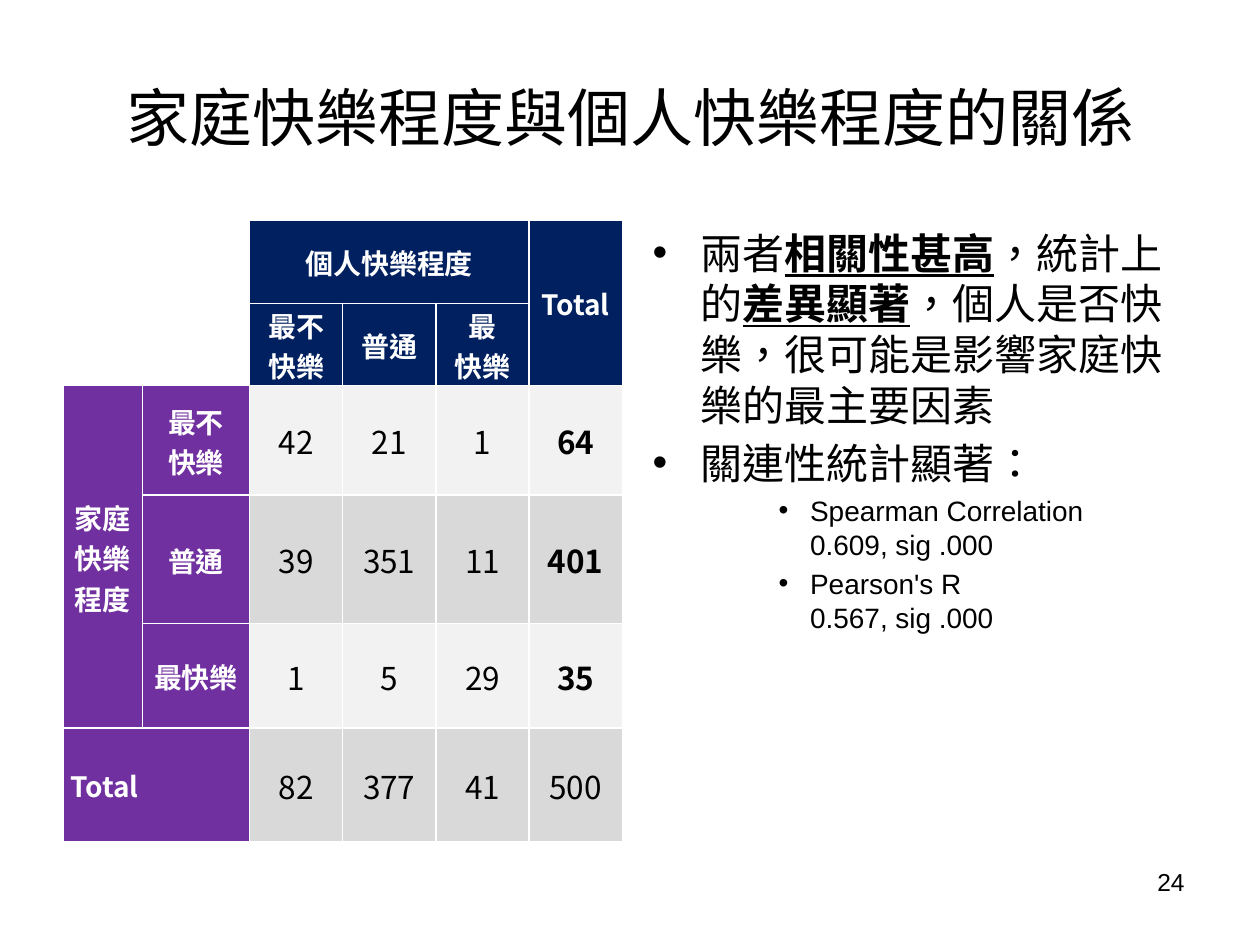
from dataclasses import dataclass
from typing import Any

from lxml import etree
from pptx import Presentation
from pptx.dml.color import RGBColor
from pptx.enum.lang import MSO_LANGUAGE_ID as Language
from pptx.enum.text import MSO_ANCHOR, MSO_AUTO_SIZE, PP_ALIGN
from pptx.oxml import parse_xml
from pptx.oxml.ns import nsdecls, qn
from pptx.util import Inches, Pt

BLACK = RGBColor(0x00, 0x00, 0x00)
WHITE = RGBColor(0xFF, 0xFF, 0xFF)
NAVY = RGBColor(0x00, 0x20, 0x60)
PURPLE = RGBColor(0x70, 0x30, 0xA0)
LIGHT_GRAY = RGBColor(0xF2, 0xF2, 0xF2)
MID_GRAY = RGBColor(0xD9, 0xD9, 0xD9)

COLUMNS = [0.63, 0.85, 0.74, 0.74, 0.74, 0.74]
ROWS = [0.66, 0.63, 0.87, 1.02, 0.83, 0.9]
MERGES = [(0, 0, 1, 1), (0, 2, 0, 4), (0, 5, 1, 5), (2, 0, 4, 0), (5, 0, 5, 1)]
CELLS = [
    ["", "", "個人快樂程度", "", "", "Total"],
    ["", "", "最不\n快樂", "普通", "最\n快樂", ""],
    ["家庭\n快樂\n程度", "最不\n快樂", "42", "21", "1", "64"],
    ["", "普通", "39", "351", "11", "401"],
    ["", "最快樂", "1", "5", "29", "35"],
    ["Total", "", "82", "377", "41", "500"],
]
FINDINGS = [
    [("兩者", False), ("相關性甚高", True), ("，統計上的", False), ("差異顯著", True),
     ("，個人是否快樂，很可能是影響家庭快樂的最主要因素", False)],
    [("關連性統計顯著：", False)],
]
STATISTICS = [
    ("Spearman Correlation", "0.609, sig .000"),
    ("Pearson's R", "0.567, sig .000"),
]


@dataclass
class SlideBuilder:
    slide: Any
    chinese_font: str = "Noto Sans CJK SC"
    latin_font: str = "Arial"

    def format(self, paragraph, size, font_name, color=BLACK, bold=False):
        font = paragraph.font
        font.size = Pt(size)
        font.bold = bold
        font.color.rgb = color
        font.name = font_name
        font.language_id = Language.TRADITIONAL_CHINESE
        defaults = paragraph._p.pPr.find(qn("a:defRPr"))
        etree.SubElement(defaults, qn("a:ea")).set("typeface", font_name)

    def place(self, shape, left, top, width, height):
        shape.left, shape.top = Inches(left), Inches(top)
        shape.width, shape.height = Inches(width), Inches(height)

    def title(self, text):
        shape = self.slide.shapes.title
        self.place(shape, 0.5, 0.3, 9, 1.25)
        frame = shape.text_frame
        frame.text = text
        frame.vertical_anchor = MSO_ANCHOR.MIDDLE
        paragraph = frame.paragraphs[0]
        paragraph.alignment = PP_ALIGN.CENTER
        self.format(paragraph, 36, self.chinese_font)

    def bullet(self, paragraph, margin, hanging, before, spacing):
        paragraph.space_before = Pt(before)
        paragraph.line_spacing = Pt(spacing)
        properties = paragraph._p.get_or_add_pPr()
        properties.set("marL", str(Inches(margin)))
        properties.set("indent", str(-Inches(hanging)))
        etree.SubElement(properties, qn("a:buFont")).set("typeface", self.latin_font)
        etree.SubElement(properties, qn("a:buChar")).set("char", "•")

    def body(self, findings, statistics):
        shape = self.slide.placeholders[1]
        self.place(shape, 5.08, 1.75, 4.42, 4.95)
        frame = shape.text_frame
        frame.auto_size = MSO_AUTO_SIZE.NONE
        for index, pieces in enumerate(findings):
            paragraph = frame.add_paragraph() if index else frame.paragraphs[0]
            self.bullet(paragraph, 0.38, 0.38, 4 if index else 0, 29)
            self.format(paragraph, 24, self.chinese_font)
            for text, emphasized in pieces:
                run = paragraph.add_run()
                run.text = text
                if emphasized:
                    run.font.bold = run.font.underline = True
        for name, value in statistics:
            paragraph = frame.add_paragraph()
            paragraph.level = 2
            self.bullet(paragraph, 1.25, 0.25, 3, 19.4)
            self.format(paragraph, 16, self.latin_font)
            paragraph.add_run().text = name
            paragraph.add_line_break()
            paragraph.add_run().text = value

    def cell(self, cell, text, fill, size, color, bold):
        properties = cell._tc.get_or_add_tcPr()
        for side in ("lnL", "lnR", "lnT", "lnB"):
            properties.append(parse_xml(
                f'<a:{side} {nsdecls("a")} w="{Pt(1)}"><a:solidFill>'
                f'<a:srgbClr val="{WHITE}"/></a:solidFill></a:{side}>'))
        if fill is None:
            cell.fill.background()
        else:
            cell.fill.solid()
            cell.fill.fore_color.rgb = fill
        cell.vertical_anchor = MSO_ANCHOR.MIDDLE
        cell.margin_left = cell.margin_right = cell.margin_top = Inches(0.01)
        cell.margin_bottom = 0
        cell.text = text
        for paragraph in cell.text_frame.paragraphs:
            paragraph.alignment = PP_ALIGN.CENTER
            self.format(paragraph, size, self.chinese_font, color, bold)

    def table(self, rows):
        table = self.slide.shapes.add_table(
            len(ROWS), len(COLUMNS), Inches(0.5), Inches(1.75),
            Inches(sum(COLUMNS)), Inches(sum(ROWS))).table
        table.first_row = table.horz_banding = False
        for column, width in zip(table.columns, COLUMNS):
            column.width = Inches(width)
        for row, height in zip(table.rows, ROWS):
            row.height = Inches(height)
        for top, left, bottom, right in MERGES:
            table.cell(top, left).merge(table.cell(bottom, right))
        last_row, last_column = len(ROWS) - 1, len(COLUMNS) - 1
        for row, texts in enumerate(rows):
            for column, text in enumerate(texts):
                cell = table.cell(row, column)
                if row < 2:
                    fill = NAVY if column > 1 else None
                    self.cell(cell, text, fill, 16, WHITE, True)
                elif column < 2:
                    self.cell(cell, text, PURPLE, 16, WHITE, True)
                else:
                    fill = MID_GRAY if row % 2 else LIGHT_GRAY
                    if row == last_row:
                        fill = MID_GRAY
                    bold = column == last_column and row < last_row
                    self.cell(cell, text, fill, 18, BLACK, bold)
        total = table.cell(last_row, 0)
        total.margin_left = Inches(0.06)
        total.text_frame.paragraphs[0].alignment = PP_ALIGN.LEFT

    def page_number(self, number):
        box = self.slide.shapes.add_textbox(
            Inches(7.17), Inches(6.83), Inches(2.33), Inches(0.52))
        box.text_frame.word_wrap = True
        paragraph = box.text_frame.paragraphs[0]
        paragraph.text = str(number)
        paragraph.alignment = PP_ALIGN.RIGHT
        self.format(paragraph, 14, self.latin_font)


def main():
    presentation = Presentation()
    presentation.slide_width, presentation.slide_height = Inches(10), Inches(7.5)
    builder = SlideBuilder(presentation.slides.add_slide(presentation.slide_layouts[1]))
    builder.title("家庭快樂程度與個人快樂程度的關係")
    builder.body(FINDINGS, STATISTICS)
    builder.table(CELLS)
    builder.page_number(24)
    presentation.save("out.pptx")


if __name__ == "__main__":
    main()
